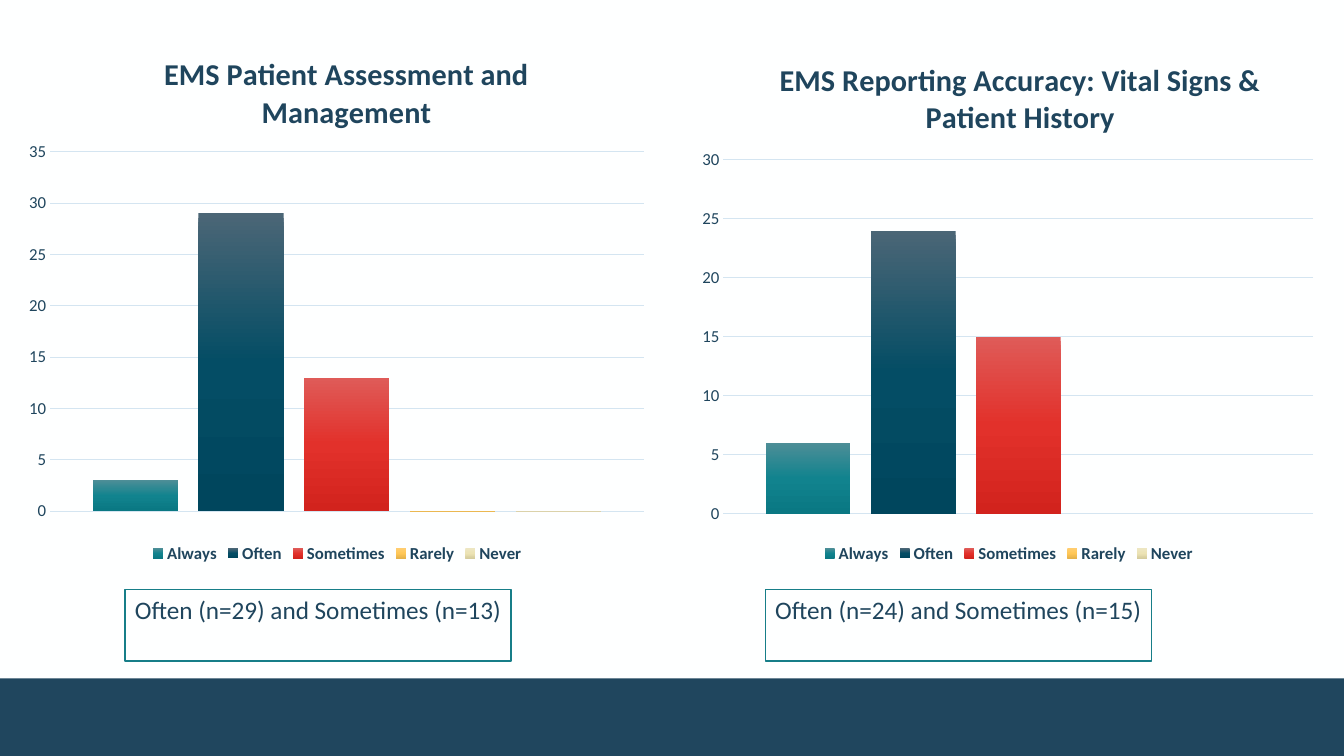
"""Build a slide with two survey column charts and their key findings."""
from dataclasses import dataclass

import pptx
import pptx.chart.data
import pptx.dml.color
import pptx.enum.chart
import pptx.enum.shapes
import pptx.enum.text
import pptx.oxml
import pptx.oxml.ns
import pptx.util
from pptx.util import Inches

COLORS = {
    "background": "FEFFFF",
    "band": "20465E",
    "text": "1F455D",
    "grid": "D4E5F1",
    "border": "177E88",
}
FONT = "Calibri"
ANSWER_GRADIENTS = {
    "Always": ("4D8E97", "11838E", "0A7883"),
    "Often": ("4B6676", "044D65", "00465D"),
    "Sometimes": ("DF5B58", "E2312B", "D2231D"),
    "Rarely": ("FFCD70", "FFC756", "E5B24A"),
    "Never": ("EDE6C2", "ECE3B4", "D5CC9D"),
}


@dataclass
class Survey:
    """One question: its chart, layout fractions and finding."""
    title: str
    counts: tuple[int, ...]
    axis_max: int
    left: float
    width: float
    title_at: tuple[float, float]
    plot_top: float
    plot_height: float
    finding: str
    finding_left: float


SURVEYS = [
    Survey("EMS Reporting Accuracy: Vital Signs & Patient History", (6, 24, 15, 0, 0), 30,
           6.86, 6.29, (0.13, 0.04), 0.24, 0.66,
           "Often (n=24) and Sometimes (n=15)", 7.59),
    Survey("EMS Patient Assessment and Management", (3, 29, 13, 0, 0), 35,
           0.18, 6.33, (0.22, 0.03), 0.225, 0.67,
           "Often (n=29) and Sometimes (n=13)", 1.24),
]


def rgb(name: str) -> pptx.dml.color.RGBColor:
    """Return a palette colour."""
    return pptx.dml.color.RGBColor.from_string(COLORS[name])


def format_font(font, size: float, bold: bool = False) -> None:
    """Apply the slide's typeface and text colour."""
    font.name = FONT
    font.size = pptx.util.Pt(size)
    font.bold = bold
    font.color.rgb = rgb("text")


def write_text(frame, text: str, *, size: float, bold: bool = False, align=None) -> None:
    """Write one formatted paragraph."""
    paragraph = frame.paragraphs[0]
    paragraph.alignment = align
    run = paragraph.add_run()
    run.text = text
    format_font(run.font, size, bold)


def add_box(slide, left: float, top: float, width: float, height: float, fill: str):
    """Add a flat rectangle without outline."""
    box = slide.shapes.add_shape(pptx.enum.shapes.MSO_SHAPE.RECTANGLE, Inches(left),
                                 Inches(top), Inches(width), Inches(height))
    box.shadow.inherit = False
    box.fill.solid()
    box.fill.fore_color.rgb = rgb(fill)
    box.line.fill.background()
    return box


def set_layout(element, before: str, **fractions: float) -> None:
    """Place a chart part by fractions of the chart area."""
    for old in element.findall(pptx.oxml.ns.qn("c:layout")):
        element.remove(old)
    target = '<c:layoutTarget val="inner"/>' if "w" in fractions else ""
    modes = "".join(f'<c:{axis}Mode val="edge"/>' for axis in "xy")
    values = "".join(f'<c:{key} val="{value}"/>' for key, value in fractions.items())
    layout = pptx.oxml.parse_xml(
        f'<c:layout {pptx.oxml.ns.nsdecls("c")}><c:manualLayout>'
        f"{target}{modes}{values}</c:manualLayout></c:layout>")
    element.find(pptx.oxml.ns.qn(before)).addprevious(layout)


def fill_gradient(series, shades: tuple[str, ...]) -> None:
    """Fill a series with an even top-to-bottom gradient."""
    stops = "".join(f'<a:gs pos="{index * 50000}"><a:srgbClr val="{shade}"/></a:gs>'
                    for index, shade in enumerate(shades))
    gradient = pptx.oxml.parse_xml(
        f'<a:gradFill {pptx.oxml.ns.nsdecls("a")} rotWithShape="1"><a:gsLst>{stops}</a:gsLst>'
        '<a:lin ang="5400000" scaled="0"/></a:gradFill>')
    series.format.line.fill.background()
    series._element.get_or_add_spPr().insert(0, gradient)


def add_survey_chart(slide, survey: Survey) -> None:
    """Add the column chart of one survey question."""
    data = pptx.chart.data.CategoryChartData()
    data.categories = ["1"]
    for answer, count in zip(ANSWER_GRADIENTS, survey.counts):
        data.add_series(answer, [count])
    chart = slide.shapes.add_chart(
        pptx.enum.chart.XL_CHART_TYPE.COLUMN_CLUSTERED, Inches(survey.left), Inches(0.31),
        Inches(survey.width), Inches(5.32), data).chart
    format_font(chart.font, 10)

    chart.has_title = True
    write_text(chart.chart_title.text_frame, survey.title, size=21.6, bold=True)
    chart.chart_title.include_in_layout = False
    title_left, title_top = survey.title_at
    set_layout(chart.chart_title._element, "c:overlay", x=title_left, y=title_top)

    chart.has_legend = True
    chart.legend.position = pptx.enum.chart.XL_LEGEND_POSITION.BOTTOM
    chart.legend.include_in_layout = False
    format_font(chart.legend.font, 12, bold=True)

    chart.category_axis.visible = False
    counts_axis = chart.value_axis
    counts_axis.minimum_scale, counts_axis.maximum_scale = 0, survey.axis_max
    counts_axis.major_unit = 5
    counts_axis.major_tick_mark = pptx.enum.chart.XL_TICK_MARK.NONE
    counts_axis.format.line.fill.background()
    format_font(counts_axis.tick_labels.font, 12)
    counts_axis.major_gridlines.format.line.color.rgb = rgb("grid")
    counts_axis.major_gridlines.format.line.width = pptx.util.Pt(0.75)

    columns = chart.plots[0]
    columns.vary_by_categories = False
    columns.gap_width, columns.overlap = 100, -24
    for series in columns.series:
        series.invert_if_negative = False
        fill_gradient(series, ANSWER_GRADIENTS[series.name])
    set_layout(columns._element.getparent(), "c:barChart", x=0.05, y=survey.plot_top,
               w=0.93, h=survey.plot_height)


def add_finding(slide, survey: Survey) -> None:
    """Add the outlined finding below a chart."""
    finding = add_box(slide, survey.finding_left, 5.85, 3.83, 0.71, "background")
    finding.line.color.rgb = rgb("border")
    finding.line.width = pptx.util.Pt(1)
    finding.text_frame.word_wrap = True
    finding.text_frame.vertical_anchor = pptx.enum.text.MSO_ANCHOR.TOP
    write_text(finding.text_frame, survey.finding, size=18,
               align=pptx.enum.text.PP_ALIGN.LEFT)


def main() -> None:
    """Build and save the slide."""
    deck = pptx.Presentation()
    deck.slide_width, deck.slide_height = Inches(13.33), Inches(7.5)
    slide = deck.slides.add_slide(deck.slide_layouts[6])
    slide.background.fill.solid()
    slide.background.fill.fore_color.rgb = rgb("background")
    add_box(slide, 0, 6.73, 13.33, 0.77, "band")
    for survey in SURVEYS:
        add_survey_chart(slide, survey)
    for survey in reversed(SURVEYS):
        add_finding(slide, survey)
    deck.save("out.pptx")


if __name__ == "__main__":
    main()
